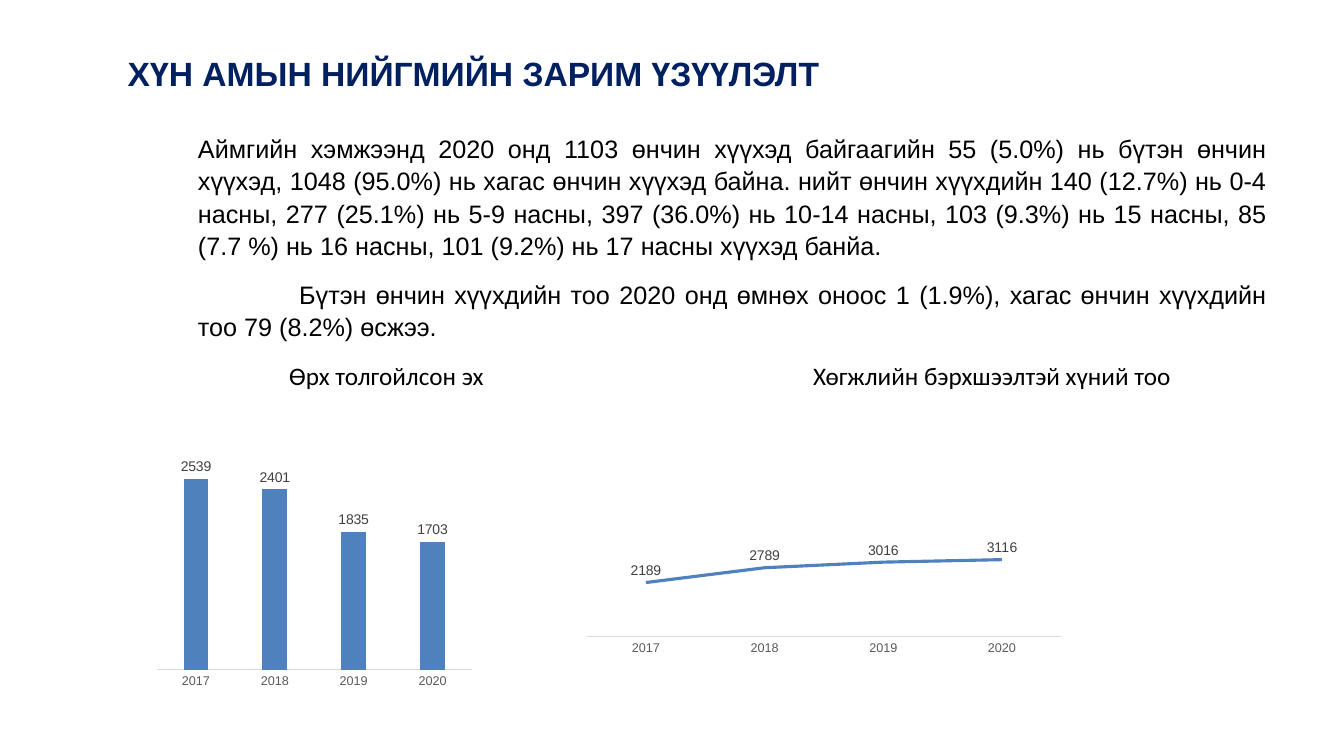
from lxml import etree
from pptx import Presentation
from pptx.chart.data import CategoryChartData
from pptx.dml.color import RGBColor
from pptx.enum import chart as ch, text
from pptx.util import Cm, Pt

TITLE = "ХҮН АМЫН НИЙГМИЙН ЗАРИМ ҮЗҮҮЛЭЛТ"
BODY = [
    "Аймгийн хэмжээнд 2020 онд 1103 өнчин хүүхэд байгаагийн 55 (5.0%) нь бүтэн "
    "өнчин хүүхэд, 1048 (95.0%) нь хагас өнчин хүүхэд байна. нийт өнчин хүүхдийн "
    "140 (12.7%) нь 0-4 насны, 277 (25.1%) нь 5-9 насны, 397 (36.0%) нь 10-14 "
    "насны, 103 (9.3%) нь 15 насны, 85 (7.7 %) нь 16 насны, 101 (9.2%) нь 17 "
    "насны хүүхэд банйа.",
    "Бүтэн өнчин хүүхдийн тоо 2020 онд өмнөх оноос 1 (1.9%), хагас өнчин "
    "хүүхдийн тоо 79 (8.2%) өсжээ.",
]
YEARS = ["2017", "2018", "2019", "2020"]
# Boxes are left, top, width, height in cm; plots are shares of the chart.
CHARTS = [
    dict(caption="Өрх толгойлсон эх", caption_box=(7.29, 8.97, 7, 1),
         kind=ch.XL_CHART_TYPE.COLUMN_CLUSTERED, values=[2539, 2401, 1835, 1703],
         box=(3.78, 11.07, 8.28, 6.38), plot=(0.02, 0.02, 0.96, 0.89),
         top=3000, label=ch.XL_LABEL_POSITION.OUTSIDE_END),
    dict(caption="Хөгжлийн бэрхшээлтэй хүний тоо", caption_box=(20.49, 8.97, 11, 1),
         kind=ch.XL_CHART_TYPE.LINE, values=[2189, 2789, 3016, 3116],
         box=(14.4, 13.54, 12.73, 3.25), plot=(0.03, 0.1, 0.94, 0.67),
         top=3500, label=ch.XL_LABEL_POSITION.ABOVE),
]
THEME = dict(
    font="Arial", caption_font="Calibri",
    title=RGBColor(0x00, 0x20, 0x60), ink=RGBColor(0, 0, 0),
    series=RGBColor(0x4F, 0x81, 0xBD), axis=RGBColor(0xD9, 0xD9, 0xD9),
    tick=RGBColor(0x59, 0x59, 0x59), label=RGBColor(0x40, 0x40, 0x40),
    title_size=24, body_size=18, label_size=10, tick_size=9,
)


def style(font, size, color, name=THEME["font"], bold=False):
    font.name, font.size, font.bold = name, Pt(size), bold
    font.color.rgb = color


def add_text(slide, box, lines, anchor, inset=0.25):
    tf = slide.shapes.add_textbox(*map(Cm, box)).text_frame
    tf.word_wrap = True
    tf.vertical_anchor = anchor
    tf.margin_left = tf.margin_right = Cm(inset)
    tf.text = "\n".join(lines)
    return tf.paragraphs


def place_plot(chart, plot):
    """Fix the inner plot area to the given shares of the chart."""
    area = chart._chartSpace.chart.plotArea
    ns = area.nsmap["c"]
    for old in area.findall(f"{{{ns}}}layout"):
        area.remove(old)
    layout = etree.Element(f"{{{ns}}}layout")
    manual = etree.SubElement(layout, f"{{{ns}}}manualLayout")
    settings = [("layoutTarget", "inner"), ("xMode", "edge"), ("yMode", "edge")]
    for tag, value in settings + list(zip("xywh", plot)):
        etree.SubElement(manual, f"{{{ns}}}{tag}").set("val", str(value))
    area.insert(0, layout)


def add_chart(slide, item):
    data = CategoryChartData()
    data.categories = YEARS
    data.add_series("Series 1", item["values"])
    chart = slide.shapes.add_chart(item["kind"], *map(Cm, item["box"]), data).chart
    chart.has_legend = chart.has_title = False
    style(chart.font, THEME["label_size"], THEME["ink"])

    values = chart.value_axis
    values.visible = values.has_major_gridlines = False
    values.minimum_scale, values.maximum_scale = 0, item["top"]
    years = chart.category_axis
    years.has_major_gridlines = False
    years.major_tick_mark = years.minor_tick_mark = ch.XL_TICK_MARK.NONE
    years.format.line.color.rgb = THEME["axis"]
    years.format.line.width = Pt(0.75)
    style(years.tick_labels.font, THEME["tick_size"], THEME["tick"])

    plot = chart.plots[0]
    plot.vary_by_categories = False
    series = plot.series[0]
    if item["kind"] == ch.XL_CHART_TYPE.LINE:
        series.smooth = False
        series.marker.style = ch.XL_MARKER_STYLE.NONE
        series.format.line.color.rgb = THEME["series"]
        series.format.line.width = Pt(2.25)
    else:
        plot.gap_width, plot.overlap = 219, -27
        series.format.fill.solid()
        series.format.fill.fore_color.rgb = THEME["series"]
    labels = series.data_labels
    labels.show_value = True
    labels.position = item["label"]
    style(labels.font, THEME["label_size"], THEME["label"])
    place_plot(chart, item["plot"])


def main():
    prs = Presentation()
    prs.slide_width, prs.slide_height = Cm(33.87), Cm(19.05)
    slide = prs.slides.add_slide(prs.slide_layouts[6])

    title = add_text(slide, (2.97, 0.84, 27.31, 1.98), [TITLE], text.MSO_ANCHOR.MIDDLE)
    style(title[0].font, THEME["title_size"], THEME["title"], bold=True)

    body = add_text(slide, (4.74, 3.18, 27.44, 5.75), BODY, text.MSO_ANCHOR.TOP)
    for p in body:
        p.alignment = text.PP_ALIGN.JUSTIFY
        p.line_spacing = 1.07
        p.space_after = Pt(8)
        style(p.font, THEME["body_size"], THEME["ink"])
    body[1].space_before = Pt(3.6)
    body[1]._p.get_or_add_pPr().set("indent", str(Cm(2.55)))

    for item in CHARTS:
        caption = add_text(slide, item["caption_box"], [item["caption"]],
                           text.MSO_ANCHOR.MIDDLE, inset=0)
        style(caption[0].font, THEME["body_size"], THEME["ink"], THEME["caption_font"])
        add_chart(slide, item)
    prs.save("out.pptx")


if __name__ == "__main__":
    main()
